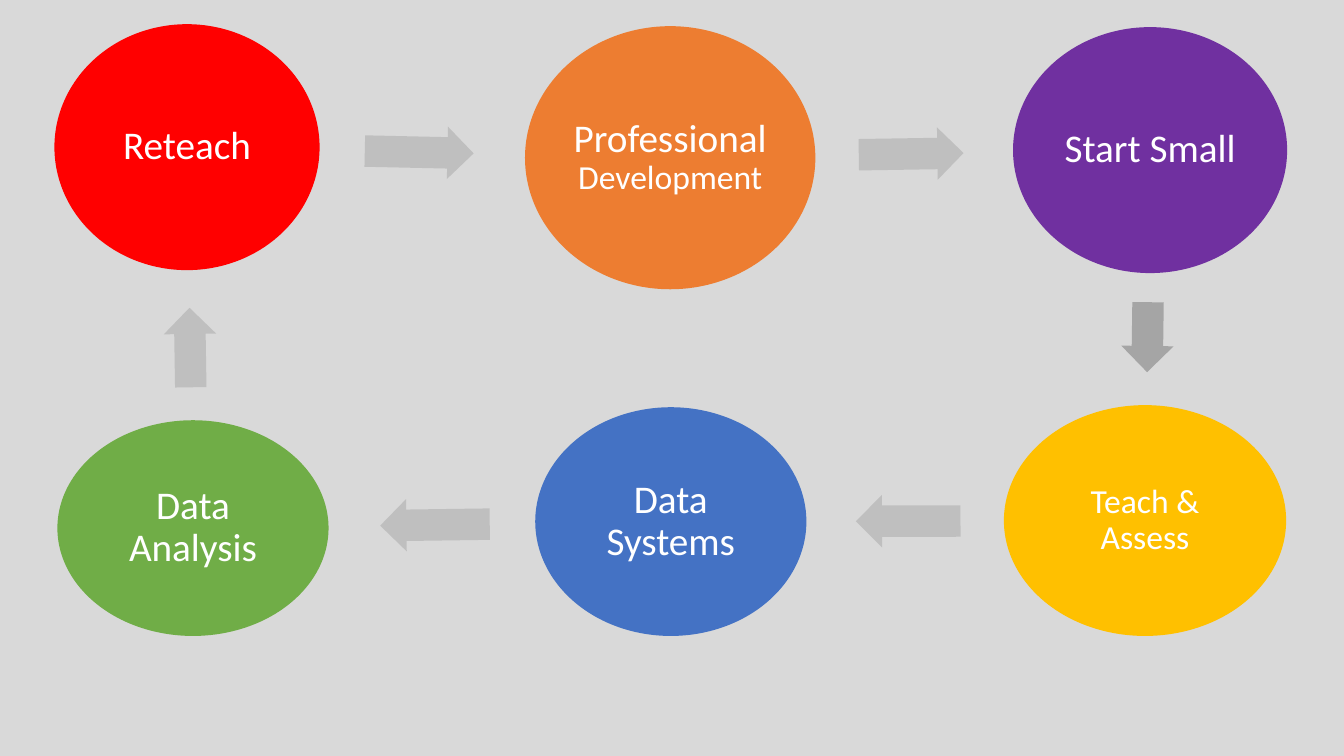
import math

import pptx
import pptx.dml.color
import pptx.enum.shapes
import pptx.enum.text
import pptx.util

Pt = pptx.util.Pt
SHAPE = pptx.enum.shapes.MSO_SHAPE

# Steps in cycle order: text runs with sizes, fill, box, inset, colour of the arrow that follows
STEPS = [
    ([("Professional", 28), (" Development", 24)], "ED7D31", (375, 18.7, 207.4, 187.9), 2.8, "BFBFBF"),
    ([("Start Small", 28)], "7030A0", (723.6, 19.4, 195.8, 175.7), 2.8, "A5A5A5"),
    ([("Teach & Assess", 24)], "FFC000", (717.1, 289.4, 201.6, 164.9), 2.4, "BFBFBF"),
    ([("Data Systems", 28)], "4472C4", (382.3, 290.9, 193.7, 163.4), 2.8, "BFBFBF"),
    ([("Data Analysis", 28)], "70AD47", (41, 300.2, 193.7, 154.1), 2.8, "BFBFBF"),
    ([("Reteach", 28)], "FF0000", (38.9, 17.3, 189.4, 175.7), 2.8, "BFBFBF"),
]
ARROW_HEIGHT = 37.4
ARROW_SHARE = 0.53  # arrow length as a share of the gap between circles
ARROW_MIDDLE = 0.485  # arrow centre as a share of that gap


def rgb(hex_colour):
    return pptx.dml.color.RGBColor.from_string(hex_colour)


def add_plain_shape(slide, kind, box, colour):
    shape = slide.shapes.add_shape(kind, *[Pt(length) for length in box])
    shape.shadow.inherit = False
    shape.fill.solid()
    shape.fill.fore_color.rgb = rgb(colour)
    shape.line.fill.background()
    return shape


def add_step(slide, box, runs, colour, inset):
    frame = add_plain_shape(slide, SHAPE.OVAL, box, colour).text_frame
    frame.word_wrap = True
    frame.vertical_anchor = pptx.enum.text.MSO_ANCHOR.MIDDLE
    frame.margin_left = frame.margin_right = Pt(inset)
    frame.margin_top = frame.margin_bottom = Pt(inset)
    label = frame.paragraphs[0]
    label.alignment = pptx.enum.text.PP_ALIGN.CENTER
    label.line_spacing = 0.9
    label.font.name = "Calibri"
    label.font.color.rgb = rgb("FFFFFF")
    label.font.size = Pt(runs[0][1])
    for text, size in runs:
        run = label.add_run()
        run.text = text
        if size != runs[0][1]:
            run.font.size = Pt(size)


def add_arrow(slide, start_box, end_box, colour):
    """Place an arrow in the gap between two boxes, on the line joining their centres."""
    start_x, start_y, end_x, end_y = [
        box[axis] + box[axis + 2] / 2 for box in (start_box, end_box) for axis in (0, 1)]
    dx, dy = end_x - start_x, end_y - start_y
    side = 2 if abs(dx) > abs(dy) else 3
    span = max(abs(dx), abs(dy))
    gap = span - (start_box[side] + end_box[side]) / 2
    position = (start_box[side] / 2 + ARROW_MIDDLE * gap) / span
    length = ARROW_SHARE * gap
    box = (start_x + position * dx - length / 2,
           start_y + position * dy - ARROW_HEIGHT / 2, length, ARROW_HEIGHT)
    arrow = add_plain_shape(slide, SHAPE.RIGHT_ARROW, box, colour)
    arrow.adjustments[0] = 0.6
    arrow.adjustments[1] = 0.5
    arrow.rotation = math.degrees(math.atan2(dy, dx)) % 360


def add_cycle(slide, steps):
    following = steps[1:] + steps[:1]
    for (runs, colour, box, inset, arrow_colour), next_step in zip(steps, following):
        add_step(slide, box, runs, colour, inset)
        add_arrow(slide, box, next_step[2], arrow_colour)


def main():
    deck = pptx.Presentation()
    deck.slide_width, deck.slide_height = Pt(960), Pt(540)
    slide = deck.slides.add_slide(deck.slide_layouts[6])
    slide.background.fill.solid()
    slide.background.fill.fore_color.rgb = rgb("D9D9D9")
    add_cycle(slide, STEPS)
    deck.save("out.pptx")


if __name__ == "__main__":
    main()
